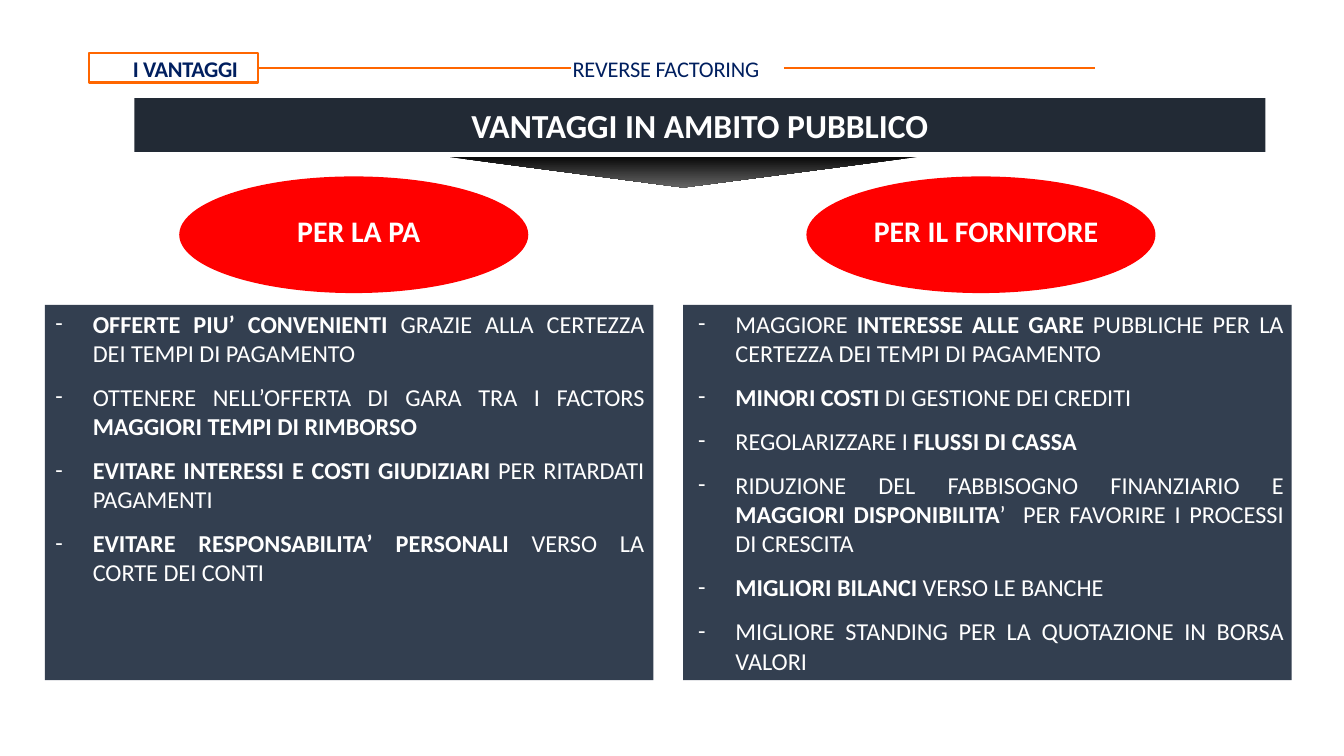
from dataclasses import dataclass

from lxml import etree
from pptx import Presentation
from pptx import util as u
from pptx.dml.color import RGBColor
from pptx.enum import shapes, text
from pptx.oxml.ns import qn


@dataclass(frozen=True)
class Theme:
    font: str = "Calibri"
    white: str = "FFFFFF"
    navy: str = "001F5F"
    orange: str = "FF6600"
    red: str = "FF0000"
    banner: str = "222A35"
    panel: str = "333F50"
    arrow: tuple = ("080808", "666666")
    title_size: float = 18
    heading_size: float = 16
    body_size: float = 13
    tag_size: float = 12
    line_width: float = 1.19


THEME = Theme()
TAG = "I VANTAGGI"
TOPIC = "REVERSE FACTORING"
TITLE = "VANTAGGI IN AMBITO PUBBLICO"

# Each benefit is a list of (words, bold) runs.
COLUMNS = [
    {"heading": "PER LA PA", "left": 24, "oval_left": 96, "indent": 25.7, "inset": 5,
     "benefits": [
         [("OFFERTE PIU’ CONVENIENTI ", True),
          ("GRAZIE ALLA CERTEZZA DEI TEMPI DI PAGAMENTO", False)],
         [("OTTENERE NELL’OFFERTA DI GARA TRA I FACTORS ", False),
          ("MAGGIORI TEMPI DI RIMBORSO", True)],
         [("EVITARE INTERESSI E COSTI GIUDIZIARI ", True), ("PER RITARDATI PAGAMENTI", False)],
         [("EVITARE RESPONSABILITA’ PERSONALI", True), (" VERSO LA CORTE DEI CONTI", False)],
     ]},
    {"heading": "PER IL FORNITORE", "left": 366, "oval_left": 432, "indent": 28, "inset": 4.5,
     "benefits": [
         [("MAGGIORE ", False), ("INTERESSE ALLE GARE ", True),
          ("PUBBLICHE PER LA CERTEZZA DEI TEMPI DI PAGAMENTO", False)],
         [("MINORI COSTI", True), (" DI GESTIONE DEI CREDITI", False)],
         [("REGOLARIZZARE I ", False), ("FLUSSI DI CASSA", True)],
         [("RIDUZIONE DEL FABBISOGNO FINANZIARIO E ", False), ("MAGGIORI DISPONIBILITA", True),
          ("’  PER FAVORIRE I PROCESSI DI CRESCITA", False)],
         [("MIGLIORI BILANCI ", True), ("VERSO LE BANCHE", False)],
         [("MIGLIORE STANDING PER LA QUOTAZIONE IN BORSA VALORI", False)],
     ]},
]


def rgb(value):
    return RGBColor.from_string(value)


def points(*values):
    return [u.Pt(value) for value in values]


def add_shape(parent, kind, area, fill=None, line=None):
    shape = parent.add_shape(kind, *points(*area))
    shape.shadow.inherit = False
    if fill:
        shape.fill.solid()
        shape.fill.fore_color.rgb = rgb(fill)
    else:
        shape.fill.background()
    if line:
        shape.line.color.rgb = rgb(line)
        shape.line.width = u.Pt(THEME.line_width)
    else:
        shape.line.fill.background()
    return shape


def set_frame(shape, insets, anchor=text.MSO_ANCHOR.TOP):
    """Set wrapping, anchor and the left, top, right and bottom insets."""
    frame = shape.text_frame
    frame.word_wrap = True
    frame.vertical_anchor = anchor
    (frame.margin_left, frame.margin_top,
     frame.margin_right, frame.margin_bottom) = points(*insets)
    return frame


def add_span(para, words, size, color, bold=False, spacing=0):
    """Add one run; spacing is the letter spacing in points."""
    span = para.add_run()
    span.text = words
    span.font.name = THEME.font
    span.font.size = u.Pt(size)
    span.font.bold = bold
    span.font.color.rgb = rgb(color)
    if spacing:
        span.font._element.set("spc", str(round(spacing * 100)))


def add_rule(page, start, end, y):
    rule = page.shapes.add_connector(shapes.MSO_CONNECTOR.STRAIGHT, *points(start, y, end, y))
    rule.line.color.rgb = rgb(THEME.orange)
    rule.line.width = u.Pt(THEME.line_width)
    etree.SubElement(rule._element.spPr, qn("a:effectLst"))
    return rule


def set_dash(para, indent):
    """Give the paragraph a white dash bullet with a hanging indent."""
    props = para._p.get_or_add_pPr()
    props.set("marL", str(u.Pt(indent)))
    props.set("indent", str(-u.Pt(20)))
    color = etree.SubElement(props, qn("a:buClr"))
    etree.SubElement(color, qn("a:srgbClr")).set("val", THEME.white)
    etree.SubElement(props, qn("a:buFont")).set("typeface", THEME.font)
    etree.SubElement(props, qn("a:buChar")).set("char", "-")


def add_header(page):
    tag = add_shape(page.shapes, shapes.MSO_SHAPE.RECTANGLE, (47.5, 28.4, 90.7, 15.8),
                    line=THEME.orange)
    para = set_frame(tag, (0, 1.4, 0, 0)).paragraphs[0]
    para.alignment = text.PP_ALIGN.CENTER
    para.space_before = u.Pt(1.4)
    para._p.get_or_add_pPr().set("marL", str(u.Pt(13)))
    add_span(para, TAG, THEME.tag_size, THEME.navy, bold=True, spacing=-0.2)

    rule_y = 28.4 + 15.8 / 2
    add_rule(page, 138.2, 306, rule_y).begin_connect(tag, 3)
    add_rule(page, 420, 586.5, rule_y)

    topic = page.shapes.add_textbox(*points(306, 28.8, 120, 29.5))
    para = set_frame(topic, (0.7, 0.7, 0, 0)).paragraphs[0]
    para.space_before = u.Pt(1)
    add_span(para, TOPIC, THEME.tag_size, THEME.navy, spacing=-0.1)


def add_banner(page):
    arrow = add_shape(page.shapes, shapes.MSO_SHAPE.FLOWCHART_MERGE, (240, 84, 252, 16.5))
    arrow.fill.gradient()
    arrow.fill.gradient_angle = 270
    for stop, color in zip(arrow.fill.gradient_stops, THEME.arrow):
        stop.color.rgb = rgb(color)

    banner = add_shape(page.shapes, shapes.MSO_SHAPE.RECTANGLE, (72, 52.6, 606, 28.8),
                       THEME.banner)
    para = set_frame(banner, (7.2, 3.6, 7.2, 3.6)).paragraphs[0]
    para.alignment = text.PP_ALIGN.CENTER
    add_span(para, TITLE, THEME.title_size, THEME.white, bold=True)


def add_column(page, column):
    group = page.shapes.add_group_shape().shapes
    left = column["oval_left"]
    add_shape(group, shapes.MSO_SHAPE.OVAL, (left, 94.5, 187, 62.5), THEME.red)
    label = add_shape(group, shapes.MSO_SHAPE.RECTANGLE, (left + 34, 105, 124.5, 39), THEME.red)
    para = set_frame(label, (0, 0, 0, 0), text.MSO_ANCHOR.MIDDLE).paragraphs[0]
    para.alignment = text.PP_ALIGN.CENTER
    para.line_spacing = 0.9
    para.space_after = u.Pt(5.6)
    add_span(para, column["heading"], THEME.heading_size, THEME.white, bold=True)

    panel = add_shape(page.shapes, shapes.MSO_SHAPE.RECTANGLE,
                      (column["left"], 163.4, 326, 201), THEME.panel)
    frame = set_frame(panel, (0, 2, column["inset"], 0))
    for index, benefit in enumerate(column["benefits"]):
        para = frame.add_paragraph() if index else frame.paragraphs[0]
        para.alignment = text.PP_ALIGN.JUSTIFY
        para.space_after = u.Pt(8)
        set_dash(para, column["indent"])
        for words, bold in benefit:
            add_span(para, words, THEME.body_size, THEME.white, bold)


def main():
    deck = Presentation()
    deck.slide_width, deck.slide_height = points(720, 405)
    page = deck.slides.add_slide(deck.slide_layouts[6])
    add_banner(page)
    add_header(page)
    for column in COLUMNS:
        add_column(page, column)
    deck.save("out.pptx")


if __name__ == "__main__":
    main()
